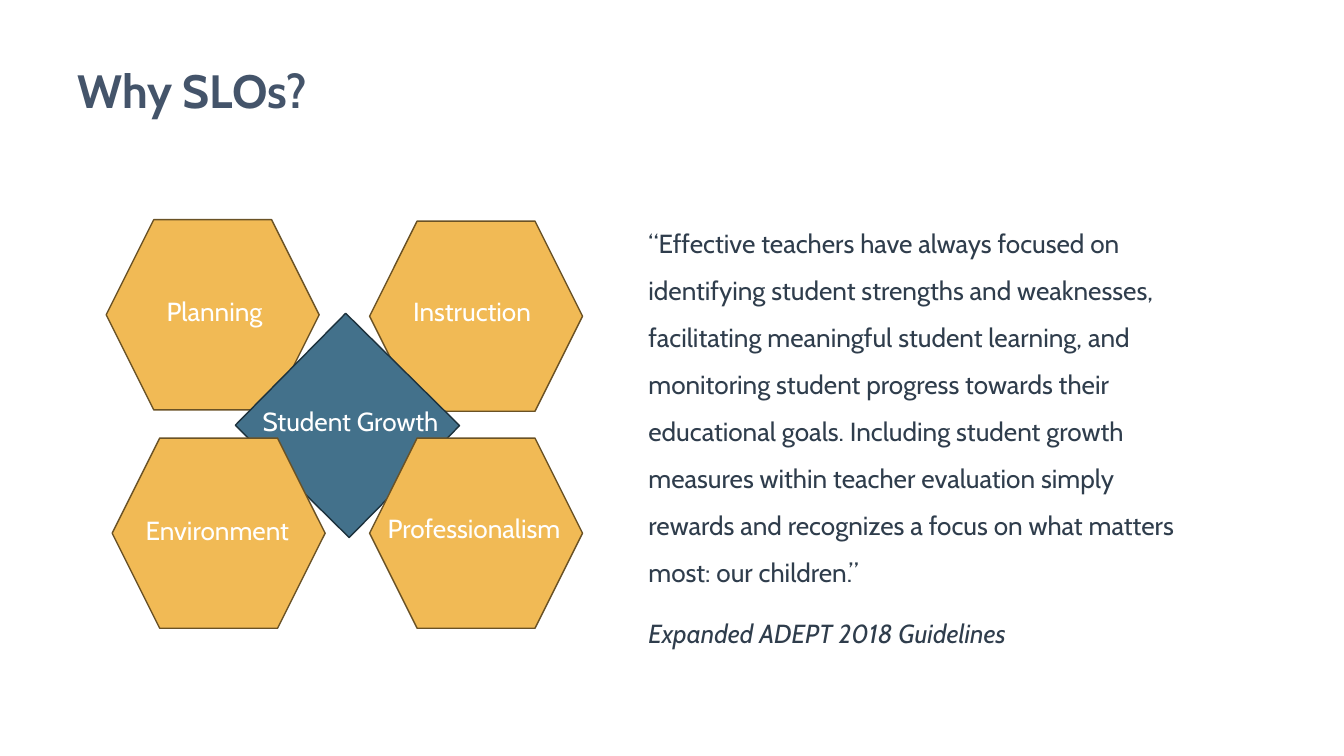
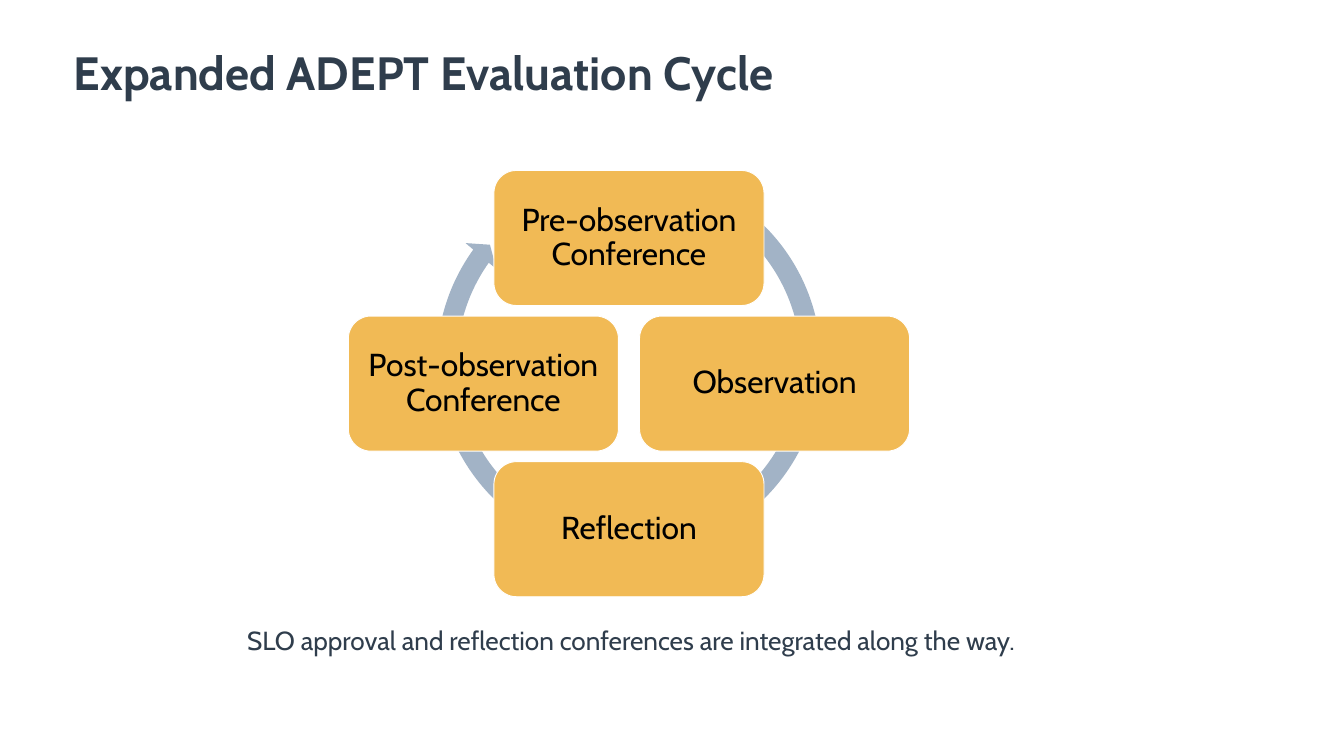
from dataclasses import dataclass

from pptx import Presentation
from pptx.dml.color import RGBColor
from pptx.enum.shapes import MSO_SHAPE as Preset
from pptx.enum.text import MSO_ANCHOR as Anchor, PP_ALIGN as Align
from pptx.shapes.autoshape import Shape
from pptx.slide import Slide
from pptx.util import Pt

FONT = "Cabin"
WHITE = RGBColor(0xFF, 0xFF, 0xFF)
BLACK = RGBColor(0x00, 0x00, 0x00)
SLATE = RGBColor(0x44, 0x54, 0x6A)
NAVY = RGBColor(0x2F, 0x3D, 0x4C)
GOLD = RGBColor(0xF1, 0xBA, 0x55)
BROWN = RGBColor(0x6A, 0x52, 0x25)
BLUE = RGBColor(0x43, 0x71, 0x8B)
DARK_BLUE = RGBColor(0x1D, 0x32, 0x3D)
PALE_BLUE = RGBColor(0xA2, 0xB3, 0xC6)

HEXAGON_SIZE = (228.2, 203.8)
NODE_SIZE = (289.4, 144.7)
CYCLE_CENTRE = (673.9, 411)
CYCLE_RADIUS = 156
ARROW_SIZE = 433.4
NODE_MARGIN = 7


@dataclass(frozen=True)
class Area:
    left: float
    top: float
    width: float
    height: float

    def lengths(self) -> list[Pt]:
        return [Pt(n) for n in (self.left, self.top, self.width, self.height)]

    def shrunk(self, margin: float) -> "Area":
        return Area(self.left + margin, self.top + margin,
                    self.width - 2 * margin, self.height - 2 * margin)


@dataclass(frozen=True)
class Standard:
    """A hexagon corner and the area of the label lying on it."""
    left: float
    top: float
    name: str
    label: Area


@dataclass(frozen=True)
class Stage:
    """A cycle step, placed by its direction from the centre."""
    name: str
    across: int
    down: int


TOP_STANDARDS = (
    Standard(113.8, 235.4, "Planning", Area(171.4, 312.5, 198, 56.2)),
    Standard(396, 236.9, "Instruction", Area(435.6, 312.5, 221, 41)),
)
BOTTOM_STANDARDS = (
    Standard(120.2, 469.4, "Environment", Area(149, 547.2, 270.7, 41)),
    Standard(396, 469.4, "Professionalism", Area(408.2, 545, 224.6, 41)),
)
STAGES = (
    Stage("Pre-observation Conference", 0, -1),
    Stage("Observation", 1, 0),
    Stage("Reflection", 0, 1),
    Stage("Post-observation Conference", -1, 0),
)
QUOTE = (
    "“Effective teachers have always focused on identifying student strengths "
    "and weaknesses, facilitating meaningful student learning, and monitoring "
    "student progress towards their educational goals. Including student growth "
    "measures within teacher evaluation simply rewards and recognizes a focus on "
    "what matters most: our children.”"
)


def add_text(page: Slide, area: Area, *texts: str, size: float = 28,
             color: RGBColor = NAVY, bold: bool = False,
             last_italic: bool = False, align: Align = Align.LEFT,
             anchor: Anchor = Anchor.TOP, spacing: float = 1,
             gap: float = 0, inset: float | None = None) -> None:
    """Add a text box with one paragraph per text, gap points apart."""
    frame = page.shapes.add_textbox(*area.lengths()).text_frame
    frame.word_wrap = True
    frame.vertical_anchor = anchor
    if inset is not None:
        frame.margin_left = frame.margin_right = Pt(inset)
        frame.margin_top = frame.margin_bottom = Pt(inset)
    for index, text in enumerate(texts):
        para = frame.add_paragraph() if index else frame.paragraphs[0]
        para.alignment = align
        para.line_spacing = spacing
        if index:
            para.space_before = Pt(gap)
        span = para.add_run()
        span.text = text
        font = span.font
        font.name, font.size, font.bold = FONT, Pt(size), bold
        font.italic = last_italic and index == len(texts) - 1
        font.color.rgb = color


def add_block(page: Slide, preset: Preset, area: Area, fill: RGBColor,
              line: RGBColor | None = None, line_width: float = 1.5) -> Shape:
    block = page.shapes.add_shape(preset, *area.lengths())
    block.shadow.inherit = False
    block.fill.solid()
    block.fill.fore_color.rgb = fill
    if line is None:
        block.line.fill.background()
    else:
        block.line.color.rgb = line
        block.line.width = Pt(line_width)
    return block


def add_title(page: Slide, text: str, left: float, top: float,
              color: RGBColor) -> None:
    add_text(page, Area(left, top, 1295.3, 86.4), text, size=50, color=color,
             bold=True)


def add_standards(page: Slide, standards: tuple[Standard, ...]) -> None:
    for standard in standards:
        area = Area(standard.left, standard.top, *HEXAGON_SIZE)
        add_block(page, Preset.HEXAGON, area, GOLD, BROWN)
        add_text(page, standard.label, standard.name, color=WHITE)


def add_stage(page: Slide, stage: Stage) -> None:
    width, height = NODE_SIZE
    centre_x, centre_y = CYCLE_CENTRE
    area = Area(centre_x + stage.across * CYCLE_RADIUS - width / 2,
                centre_y + stage.down * CYCLE_RADIUS - height / 2,
                width, height)
    add_block(page, Preset.ROUNDED_RECTANGLE, area, GOLD, WHITE, 1)
    add_text(page, area.shrunk(NODE_MARGIN), stage.name, size=34, color=BLACK,
             align=Align.CENTER, anchor=Anchor.MIDDLE, spacing=0.9, inset=10)


def build_reasons(page: Slide) -> None:
    add_title(page, "Why SLOs?", 75.6, 62.6, SLATE)
    add_standards(page, TOP_STANDARDS)
    diamond = add_block(page, Preset.RECTANGLE, Area(288, 370.1, 168.5, 171.4),
                        BLUE, DARK_BLUE)
    diamond.rotation = 314.6
    add_text(page, Area(274.3, 430.6, 219.6, 41), "Student Growth", color=WHITE)
    add_standards(page, BOTTOM_STANDARDS)
    add_text(page, Area(687.6, 223.2, 596.9, 575.3), QUOTE,
             "Expanded ADEPT 2018 Guidelines", last_italic=True, spacing=1.5,
             gap=15)


def build_cycle(page: Slide) -> None:
    add_title(page, "Expanded ADEPT Evaluation Cycle", 72, 43.2, NAVY)
    add_text(page, Area(257.8, 668.9, 923.8, 72),
             "SLO approval and reflection conferences are integrated along the way.",
             spacing=0.9)
    arrow = add_block(page, Preset.CIRCULAR_ARROW,
                      Area(CYCLE_CENTRE[0] - ARROW_SIZE / 2, 171.4,
                           ARROW_SIZE, ARROW_SIZE), PALE_BLUE)
    for index, value in enumerate((0.05, 2.73, 129.39, 179.58, 0.05)):
        arrow.adjustments[index] = value
    for stage in STAGES:
        add_stage(page, stage)


def main() -> None:
    deck = Presentation()
    deck.slide_width, deck.slide_height = Pt(1440), Pt(810)
    blank = deck.slide_layouts[6]
    for build in (build_reasons, build_cycle):
        build(deck.slides.add_slide(blank))
    deck.save("out.pptx")


if __name__ == "__main__":
    main()
